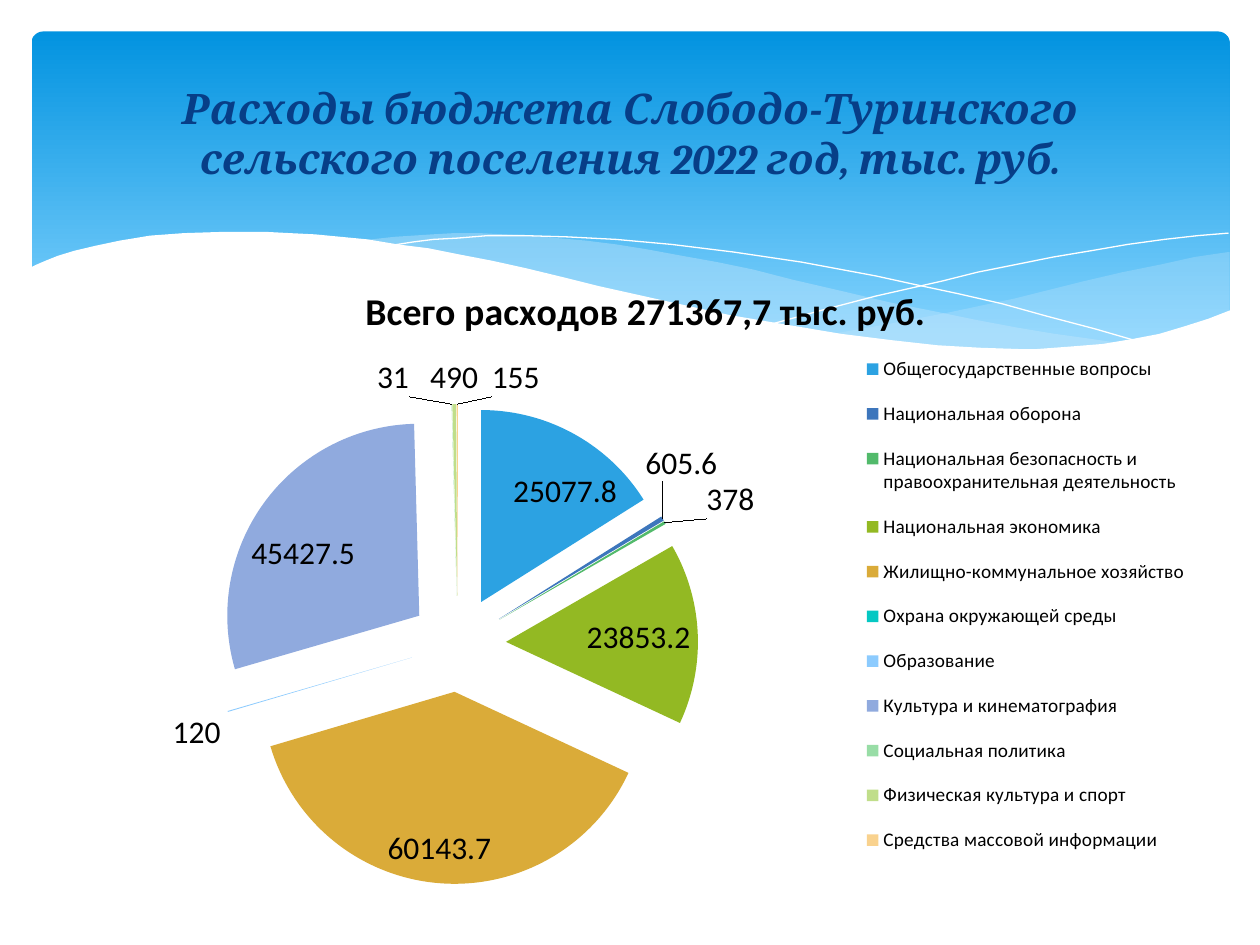
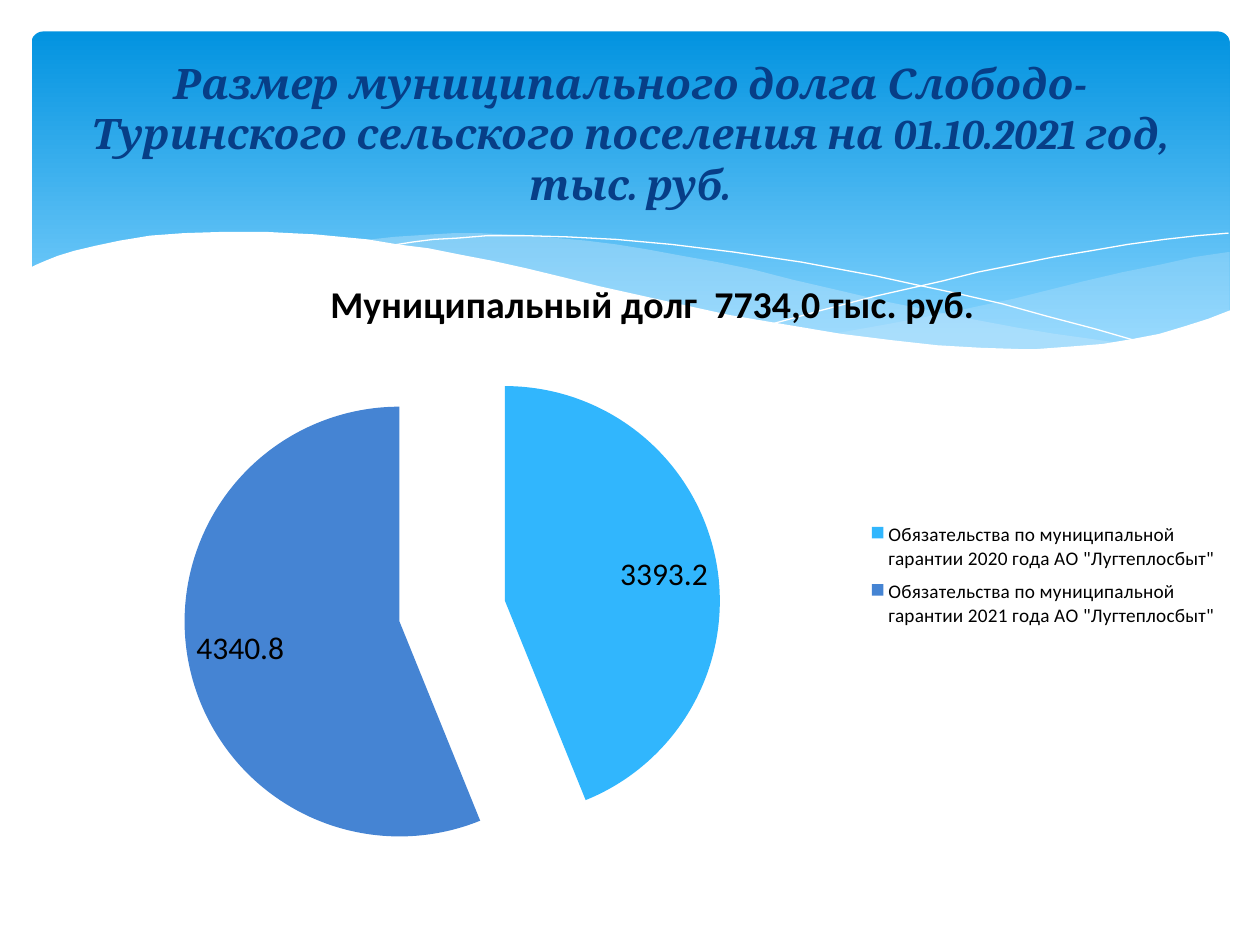
"""Build two budget slides with a shared wave band and exploded pie charts."""
import lxml.etree
import pptx
import pptx.chart.data
import pptx.dml.color
import pptx.enum.chart
import pptx.enum.shapes
import pptx.enum.text
import pptx.oxml.ns
import pptx.util

Pt = pptx.util.Pt
RGB = pptx.dml.color.RGBColor
qn = pptx.oxml.ns.qn

WHITE = RGB(0xFF, 0xFF, 0xFF)
BLACK = RGB(0x00, 0x00, 0x00)
NAVY = RGB(0x07, 0x3E, 0x87)
BAND_TOP = RGB(0x02, 0x93, 0xE0)
BAND_BOTTOM = RGB(0x83, 0xD3, 0xFE)
PALE_BLUE = RGB(0xC6, 0xE7, 0xFC)
EXPENSE_COLORS = [RGB.from_string(code) for code in (
    "2CA2E2", "3D76BC", "52BA6B", "93B923", "DAAB39", "05C8C3",
    "8CCBFE", "90AADE", "98DDA6", "C0DE8A", "F9D28E")]
DEBT_COLORS = [RGB(0x31, 0xB6, 0xFD), RGB(0x45, 0x84, 0xD3)]

WAVE_UNIT = Pt(0.72)
RIGHT_WAVE = [
    (975, 200), (948, 204), (921, 210), (891, 216), (861, 223), (805, 237),
    (753, 248), (706, 257), (661, 265), (691, 269), (719, 272), (745, 275),
    (769, 277), (803, 278), (835, 277), (863, 275), (889, 272), (913, 267),
    (935, 262), (949, 257), (963, 252), (976, 247), (976, 200)]
LONG_WAVE = [
    (893, 273), (866, 269), (837, 265), (807, 260), (775, 254), (741, 247),
    (706, 240), (668, 231), (629, 222), (598, 214), (569, 208), (541, 203),
    (514, 198), (489, 194), (465, 191), (442, 189), (420, 187), (399, 186),
    (380, 185), (361, 185), (344, 186), (313, 188), (286, 191), (323, 196),
    (362, 203), (404, 211), (449, 222), (491, 232), (530, 240), (566, 248),
    (601, 255), (634, 261), (665, 266), (695, 270), (722, 274), (748, 276),
    (773, 277), (796, 278), (828, 278), (857, 277), (876, 275)]
FALLING_LINE = [
    (309, 195), (328, 192), (344, 190), (363, 189), (387, 187), (416, 187),
    (450, 188), (489, 190), (533, 194), (582, 200), (636, 208), (695, 219),
    (727, 226), (760, 233), (795, 241), (831, 251), (869, 261), (907, 272)]
RISING_LINE = [
    (613, 257), (653, 246), (695, 235), (748, 223), (776, 216), (806, 210),
    (836, 204), (866, 199), (895, 194), (924, 190), (951, 187), (975, 185)]
WHITE_WAVE = [
    (977, 246), (959, 253), (940, 259), (920, 265), (899, 269), (875, 273),
    (850, 275), (823, 277), (809, 277), (778, 276), (744, 274), (708, 270),
    (668, 265), (626, 258), (579, 250), (529, 239), (475, 227), (447, 220),
    (418, 213), (391, 207), (365, 202), (340, 197), (316, 194), (292, 190),
    (271, 188), (250, 186), (230, 185), (211, 184), (177, 184), (146, 185),
    (119, 187), (95, 191), (76, 195), (59, 199), (46, 203), (36, 207),
    (29, 210), (23, 213), (23, 329), (977, 329)]
WAVES = [
    (RIGHT_WAVE, PALE_BLUE, 29), (LONG_WAVE, PALE_BLUE, 40),
    (FALLING_LINE, None, 100), (RISING_LINE, None, 100),
    (WHITE_WAVE, WHITE, 100)]

EXPENSES = [
    ("Общегосударственные вопросы", 25077.8),
    ("Национальная оборона", 605.6),
    ("Национальная безопасность и правоохранительная деятельность", 378),
    ("Национальная экономика", 23853.2),
    ("Жилищно-коммунальное хозяйство", 60143.7),
    ("Охрана окружающей среды", None),
    ("Образование", 120),
    ("Культура и кинематография", 45427.5),
    ("Социальная политика", 31),
    ("Физическая культура и спорт", 490),
    ("Средства массовой информации", 155)]
DEBTS = [
    ('Обязательства по муниципальной гарантии 2020 года АО "Лугтеплосбыт"', 3393.2),
    ('Обязательства по муниципальной гарантии 2021 года АО "Лугтеплосбыт"', 4340.8)]

SLIDES = [
    dict(title="Расходы бюджета Слободо-Туринского сельского поселения 2022 год, тыс. руб.",
         chart_title="Всего расходов 271367,7 тыс. руб.",
         series="Всего расходов 271367,7 тыс. руб.",
         rows=EXPENSES, colors=EXPENSE_COLORS,
         title_at=(0.26, 0.05), pie_at=(0.14, 0.24, 0.41, 0.74),
         legend_at=(0.68, 0.14, 0.3, 0.82),
         label_shifts={1: (-0.02, -0.05), 2: (0.03, 0), 8: (-0.05, 0), 10: (0.05, 0)}),
    dict(title="Размер муниципального долга Слободо-Туринского сельского поселения "
               "на 01.10.2021 год, тыс. руб.",
         chart_title="Муниципальный долг  7734,0 тыс. руб.",
         series="Series 1", rows=DEBTS, colors=DEBT_COLORS,
         title_at=(0.23, 0.04), pie_at=(0.11, 0.15, 0.46, 0.82),
         legend_at=(0.69, 0.41, 0.31, 0.19), label_shifts={})]


def place(parent, index, numbers, modes):
    """Give a chart part a manual layout in fractions of the chart."""
    for old in parent.findall(qn("c:layout")):
        parent.remove(old)
    layout = parent.makeelement(qn("c:layout"))
    manual = lxml.etree.SubElement(layout, qn("c:manualLayout"))
    for tag, value in [*modes, *zip("xywh", numbers)]:
        lxml.etree.SubElement(manual, qn("c:" + tag), val=str(value))
    parent.insert(index, layout)


deck = pptx.Presentation()
deck.slide_width, deck.slide_height = Pt(720), Pt(540)
title_layout = deck.slide_layouts[5]
pages = [deck.slides.add_slide(title_layout) for content in SLIDES]

band = pages[0].shapes.add_shape(
    pptx.enum.shapes.MSO_SHAPE.ROUNDED_RECTANGLE, Pt(18), Pt(18), Pt(684.7), Pt(194.4))
band.adjustments[0] = 0.034
band.fill.gradient()
band.fill.gradient_angle = 270
for stop, color, position in zip(band.fill.gradient_stops, (BAND_TOP, BAND_BOTTOM), (0, 0.9)):
    stop.color.rgb = color
    stop.position = position
band.line.fill.background()
decorations = [band]

for points, color, opacity in WAVES:
    builder = pages[0].shapes.build_freeform(*points[0], scale=WAVE_UNIT)
    builder.add_line_segments(points[1:], close=color is not None)
    wave = builder.convert_to_shape()
    if color is None:
        wave.fill.background()
        wave.line.color.rgb = WHITE
        wave.line.width = Pt(0)
    else:
        wave.fill.solid()
        wave.fill.fore_color.rgb = color
        wave.line.fill.background()
        tint = wave.element.xpath(".//a:solidFill/a:srgbClr")[0]
        lxml.etree.SubElement(tint, qn("a:alpha"), val=str(opacity * 1000))
    decorations.append(wave)

for index, shape in enumerate(decorations):
    shape.shadow.inherit = False
    title_layout.shapes.element.insert(2 + index, shape.element)

EDGES = [("xMode", "edge"), ("yMode", "edge")]
BEST_FIT = pptx.enum.chart.XL_LABEL_POSITION.BEST_FIT

for page, content in zip(pages, SLIDES):
    title = page.shapes.title
    title.left, title.top, title.width, title.height = Pt(36), Pt(26.6), Pt(648), Pt(98.6)
    title.text_frame.text = content["title"]
    title.text_frame.word_wrap = True
    title.text_frame.auto_size = pptx.enum.text.MSO_AUTO_SIZE.NONE
    title.text_frame.vertical_anchor = pptx.enum.text.MSO_ANCHOR.MIDDLE
    para = title.text_frame.paragraphs[0]
    para.alignment = pptx.enum.text.PP_ALIGN.CENTER
    para.font.name, para.font.size = "Cambria", Pt(24)
    para.font.bold = para.font.italic = True
    para.font.color.rgb = NAVY

    data = pptx.chart.data.CategoryChartData()
    data.categories = [name for name, value in content["rows"]]
    data.add_series(content["series"], [value for name, value in content["rows"]])
    chart = page.shapes.add_chart(
        pptx.enum.chart.XL_CHART_TYPE.PIE, Pt(31), Pt(139.7), Pt(668.9), Pt(374.4), data).chart
    chart.font.name, chart.font.size = "Calibri", Pt(18)
    chart.font.color.rgb = BLACK

    chart.has_title = True
    chart.chart_title.text_frame.text = content["chart_title"]
    heading = chart.chart_title.text_frame.paragraphs[0]
    heading.font.name, heading.font.size = "Calibri", Pt(21.6)
    heading.font.bold = True
    heading.font.color.rgb = BLACK

    chart.has_legend = True
    chart.legend.position = pptx.enum.chart.XL_LEGEND_POSITION.RIGHT
    chart.legend.include_in_layout = False
    chart.legend.font.name, chart.legend.font.size = "Calibri", Pt(11)
    chart.legend.font.color.rgb = BLACK

    pie = chart.plots[0]
    pie.vary_by_categories = True
    series = pie.series[0]
    series_name = chart.element.xpath(".//c:ser/c:tx")[0]
    explosion = series_name.makeelement(qn("c:explosion"), val="25")
    series_name.addnext(explosion)
    for index, color in enumerate(content["colors"]):
        slice_fill = series.points[index].format.fill
        slice_fill.solid()
        slice_fill.fore_color.rgb = color

    labels = series.data_labels
    labels.show_value = True
    labels.position = BEST_FIT
    for index in content["label_shifts"]:
        series.points[index].data_label.position = BEST_FIT
    for label, shift in zip(chart.element.xpath(".//c:dLbl"), content["label_shifts"].values()):
        place(label, 1, shift, [])

    place(chart.element.xpath(".//c:chart/c:title")[0], 1, content["title_at"], EDGES)
    place(chart.element.xpath(".//c:legend")[0], 1, content["legend_at"], EDGES)
    place(chart.element.xpath(".//c:plotArea")[0], 0, content["pie_at"],
          [("layoutTarget", "inner"), *EDGES])

deck.save("out.pptx")
